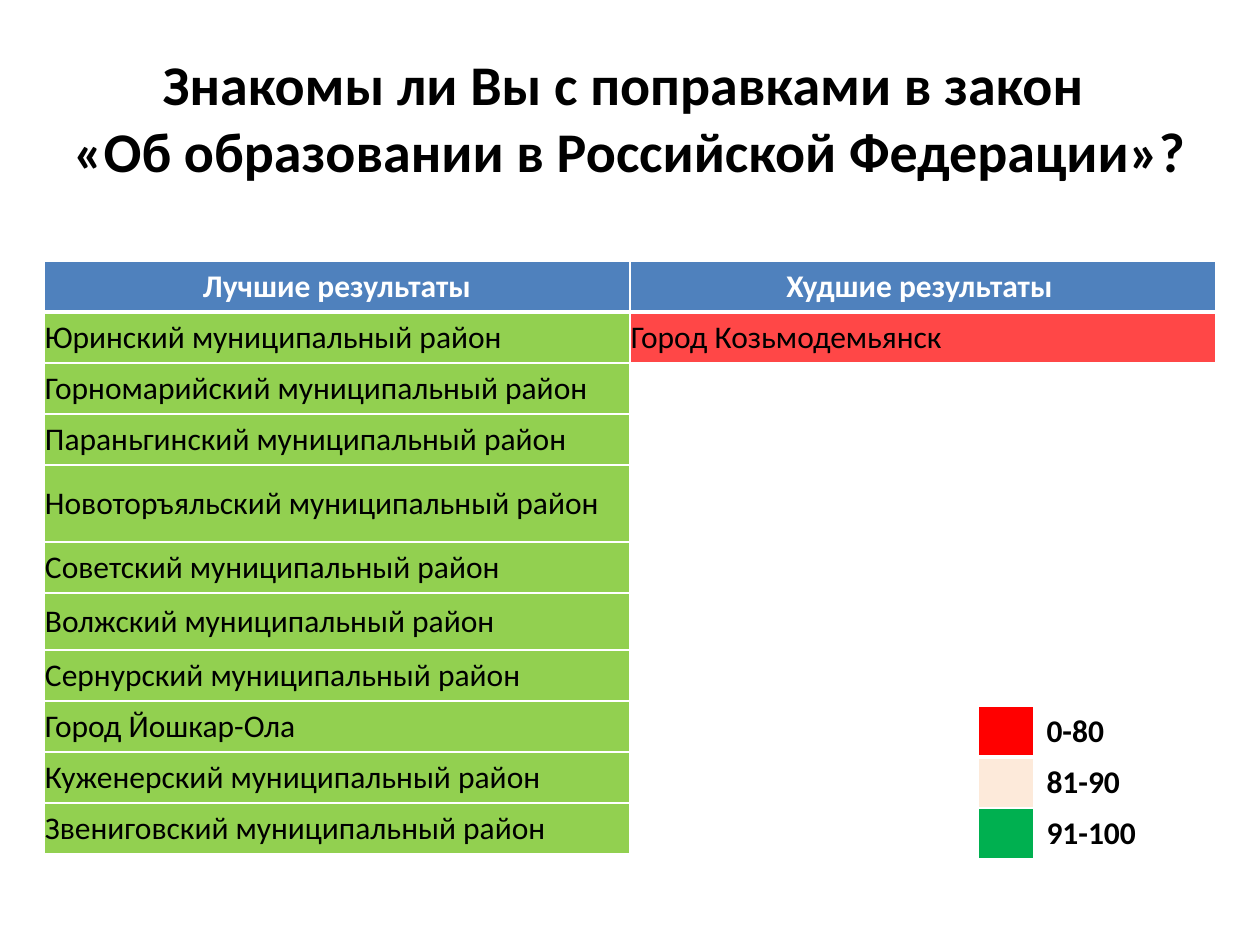
import pptx
import pptx.util
import pptx.dml.color
import pptx.enum.text
import pptx.oxml

TITLE = "Знакомы ли Вы с поправками в закон \n«Об образовании в Российской Федерации»?"
HEADS = ["Лучшие результаты", "Худшие результаты "]
BEST = [
    "Юринский муниципальный район",
    "Горномарийский муниципальный район",
    "Параньгинский муниципальный район",
    "Новоторъяльский муниципальный район",
    "Советский муниципальный район",
    "Волжский муниципальный район",
    "Сернурский муниципальный район",
    "Город Йошкар-Ола",
    "Куженерский муниципальный район",
    "Звениговский муниципальный район",
]
WORST = ["Город Козьмодемьянск"]
LEGEND = [("FF0000", "0-80"), ("FDEADA", "81-90"), ("00B050", "91-100")]

BLUE, GREEN, RED = "4F81BD", "92D050", "FF4747"
WHITE, BLACK = "FFFFFF", "000000"
ROW = 51
TALL = {4: 77, 6: 57}  # heights of the rows that differ
NS = "http://schemas.openxmlformats.org/drawingml/2006/main"
CENTER = pptx.enum.text.PP_ALIGN.CENTER
LEFT = pptx.enum.text.PP_ALIGN.LEFT
MIDDLE = pptx.enum.text.MSO_ANCHOR.MIDDLE
TIGHT = {"vertical_anchor": MIDDLE, "margin_left": 1, "margin_right": 1,
         "margin_top": 1, "margin_bottom": 0}


def px(n):
    return pptx.util.Emu(round(n * 914400 / 126))


def rgb(code):
    return pptx.dml.color.RGBColor.from_string(code)


def put(obj, vals):
    """Set attributes from a dict; margins are in px."""
    for name, val in vals.items():
        setattr(obj, name, px(val) if name.startswith("margin") else val)


def write(frame, text, size=18, color=BLACK, bold=False, align=LEFT):
    par = frame.paragraphs[0]
    par.text = text
    par.alignment = align
    for run in par.runs:
        put(run.font, {"name": "Calibri", "size": pptx.util.Pt(size), "bold": bold})
        run.font.color.rgb = rgb(color)


def edge(cell, base):
    """Draw white borders, the bottom one base points wide."""
    props = cell._tc.get_or_add_tcPr()
    for side in "LRTB":
        wide = pptx.util.Pt(base if side == "B" else 1)
        props.append(pptx.oxml.parse_xml(
            f'<a:ln{side} xmlns:a="{NS}" w="{wide}"><a:solidFill>'
            f'<a:srgbClr val="{WHITE}"/></a:solidFill></a:ln{side}>'))


def grid(slide, left, top, cols, rows):
    """Add a table with white borders and no fill."""
    table = slide.shapes.add_table(
        len(rows), len(cols), px(left), px(top), px(sum(cols)), px(sum(rows))).table
    for col, wide in zip(table.columns, cols):
        col.width = px(wide)
    for i, (row, high) in enumerate(zip(table.rows, rows)):
        row.height = px(high)
        for cell in row.cells:
            edge(cell, 1 if i else 3)
            cell.fill.background()
    return table


def paint(cell, color):
    cell.fill.solid()
    cell.fill.fore_color.rgb = rgb(color)


def main():
    deck = pptx.Presentation()
    put(deck, {"slide_width": px(1260), "slide_height": px(945)})
    slide = deck.slides.add_slide(deck.slide_layouts[6])

    frame = slide.shapes.add_textbox(px(0), px(38), px(1260), px(157)).text_frame
    put(frame, {"word_wrap": True, "vertical_anchor": MIDDLE})
    write(frame, TITLE, size=32, bold=True, align=CENTER)

    rows = [TALL.get(i, ROW) for i in range(len(BEST) + 1)]
    table = grid(slide, 44, 261, [586, 586], rows)
    for c, (head, names, color) in enumerate(zip(HEADS, [BEST, WORST], [GREEN, RED])):
        cell = table.cell(0, c)
        paint(cell, BLUE)
        write(cell.text_frame, head, color=WHITE, bold=True, align=CENTER)
        for r, name in enumerate(names, 1):
            cell = table.cell(r, c)
            paint(cell, color)
            put(cell, TIGHT)
            write(cell.text_frame, name)

    table = grid(slide, 978, 706, [56, 202], [ROW] * len(LEGEND))
    for r, (color, label) in enumerate(LEGEND):
        paint(table.cell(r, 0), color)
        paint(table.cell(r, 1), WHITE)
        write(table.cell(r, 1).text_frame, label, bold=True)

    deck.save("out.pptx")


if __name__ == "__main__":
    main()
